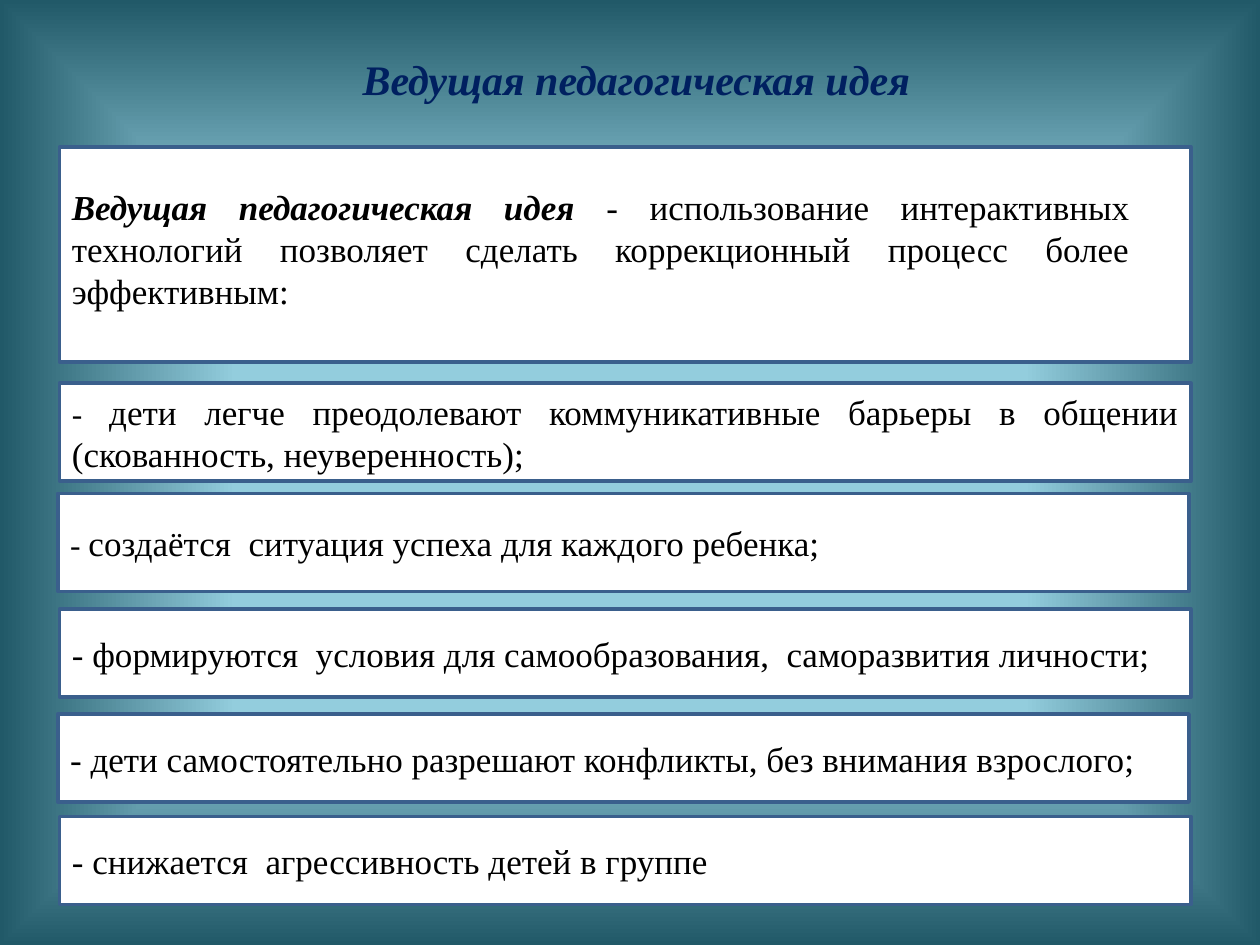
from dataclasses import dataclass

from pptx import Presentation
from pptx import util as u
from pptx.dml.color import RGBColor
from pptx.enum import shapes, text
from pptx.oxml import parse_xml
from pptx.oxml.ns import nsdecls


@dataclass(frozen=True)
class Theme:
    font: str = "Times New Roman"
    heading: str = "002060"
    body: str = "000000"
    panel: str = "FFFFFF"
    border: str = "3A5F8C"
    glow: str = "93CDDD"
    edge: str = "215968"
    heading_size: int = 24
    body_size: int = 20
    dash_size: int = 18


THEME = Theme()
LEFT, WIDTH = 34, 646.5

# Benefit: left, top, height, dash size, wording
BENEFITS = [
    (34, 219, 56, THEME.dash_size,
     "дети легче преодолевают коммуникативные барьеры в общении (скованность, неуверенность);"),
    (33, 282, 56, THEME.dash_size, "создаётся  ситуация успеха для каждого ребенка;"),
    (34, 348, 50.4, THEME.body_size,
     "формируются  условия для самообразования,  саморазвития личности;"),
    (33, 408, 50.4, THEME.body_size,
     "дети самостоятельно разрешают конфликты, без внимания взрослого;"),
    (34, 466.6, 50.4, THEME.body_size, "снижается  агрессивность детей в группе"),
]


def paint_background(slide):
    stops = "".join(
        f'<a:gs pos="{percent * 1000}"><a:srgbClr val="{color}"/></a:gs>'
        for percent, color in ((0, THEME.glow), (50, THEME.glow), (100, THEME.edge)))
    background = parse_xml(
        f'<p:bg {nsdecls("p", "a")}><p:bgPr><a:gradFill rotWithShape="1">'
        f'<a:gsLst>{stops}</a:gsLst><a:path path="shape">'
        '<a:fillToRect l="50000" t="50000" r="50000" b="50000"/></a:path>'
        '</a:gradFill><a:effectLst/></p:bgPr></p:bg>')
    slide.element.cSld.insert(0, background)


def add_words(paragraph, words, size=THEME.body_size, color=THEME.body,
              bold=False, italic=False, align=text.PP_ALIGN.JUSTIFY):
    paragraph.alignment = align
    run = paragraph.add_run()
    run.text = words
    run.font.name = THEME.font
    run.font.size = u.Pt(size)
    run.font.bold = bold
    run.font.italic = italic
    run.font.color.rgb = RGBColor.from_string(color)


def prepare_frame(shape, anchor=text.MSO_ANCHOR.MIDDLE):
    frame = shape.text_frame
    frame.word_wrap = True
    frame.vertical_anchor = anchor
    return frame


def add_panel(slide, left, top, height):
    panel = slide.shapes.add_shape(shapes.MSO_SHAPE.RECTANGLE, u.Pt(left), u.Pt(top),
                                   u.Pt(WIDTH), u.Pt(height))
    panel.shadow.inherit = False
    panel.fill.solid()
    panel.fill.fore_color.rgb = RGBColor.from_string(THEME.panel)
    panel.line.color.rgb = RGBColor.from_string(THEME.border)
    panel.line.width = u.Pt(2)
    return panel


def add_heading(slide):
    heading = slide.shapes.add_textbox(u.Pt(39.6), u.Pt(0), u.Pt(648), u.Pt(90))
    add_words(prepare_frame(heading).paragraphs[0], "Ведущая педагогическая идея",
              size=THEME.heading_size, color=THEME.heading, bold=True, italic=True,
              align=text.PP_ALIGN.CENTER)


def add_idea(slide):
    add_panel(slide, LEFT, 84, 123)
    idea = slide.shapes.add_textbox(u.Pt(LEFT), u.Pt(100), u.Pt(618.5), u.Pt(104.4))
    frame = prepare_frame(idea, anchor=text.MSO_ANCHOR.TOP)
    frame.margin_top = u.Pt(6)
    statement = frame.paragraphs[0]
    add_words(statement, "Ведущая педагогическая идея ", bold=True, italic=True)
    add_words(statement, "- использование интерактивных технологий позволяет "
                         "сделать коррекционный процесс более эффективным:")


def add_benefit(slide, left, top, height, dash_size, words):
    benefit = prepare_frame(add_panel(slide, left, top, height)).paragraphs[0]
    add_words(benefit, "- ", size=dash_size)
    add_words(benefit, words)


def main():
    deck = Presentation()
    deck.slide_width, deck.slide_height = u.Pt(720), u.Pt(540)
    slide = deck.slides.add_slide(deck.slide_layouts[6])
    paint_background(slide)

    # Heading and main idea
    add_heading(slide)
    add_idea(slide)

    # Benefits, from top to bottom
    for benefit in BENEFITS:
        add_benefit(slide, *benefit)

    deck.save("out.pptx")


if __name__ == "__main__":
    main()
